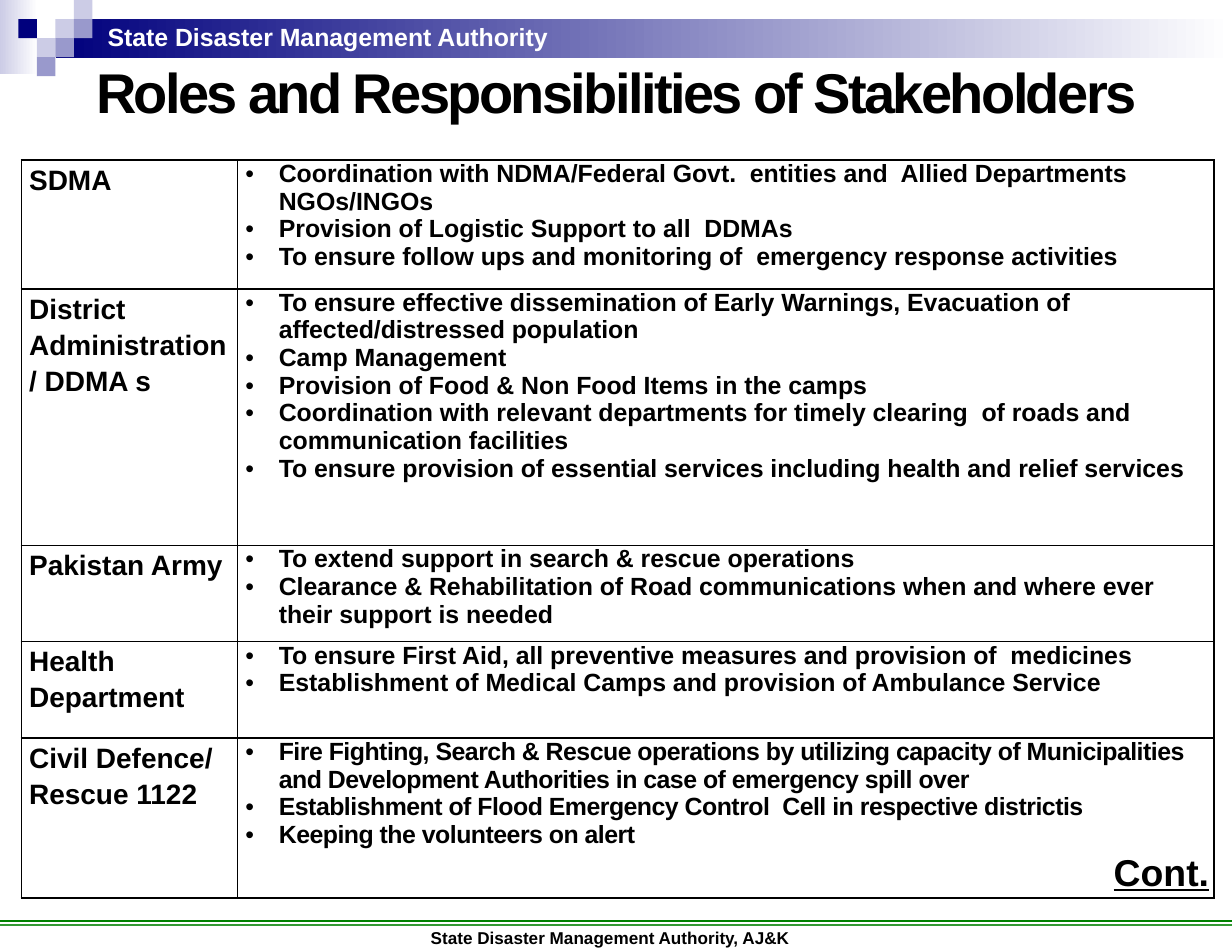
"""Builds the slide on stakeholder roles in disaster management."""
from lxml import etree
from pptx import Presentation
from pptx.dml.color import RGBColor
from pptx.enum.shapes import MSO_CONNECTOR, MSO_SHAPE
from pptx.enum.text import PP_ALIGN
from pptx.oxml.ns import qn
from pptx.util import Inches, Pt

LEFT, CENTER = PP_ALIGN.LEFT, PP_ALIGN.CENTER
RECTANGLE, STRAIGHT = MSO_SHAPE.RECTANGLE, MSO_CONNECTOR.STRAIGHT
BLACK = RGBColor(0, 0, 0)
WHITE = RGBColor(255, 255, 255)
NAVY = RGBColor(0x00, 0x00, 0x7D)
PALE = RGBColor(0xCC, 0xCC, 0xE6)
LILAC = RGBColor(0x99, 0x99, 0xCC)
DARK_GREEN = RGBColor(0x00, 0x80, 0x00)
GREEN = RGBColor(0x33, 0x99, 0x33)

SQUARES = [(3, 1, PALE), (4, 0, PALE), (4, 1, LILAC), (2, 2, PALE),
           (1, 1, NAVY), (3, 2, LILAC), (2, 3, LILAC)]
ROLES = [
    ("SDMA", 1.15, 0, [
        "Coordination with NDMA/Federal Govt.  entities and  Allied Departments NGOs/INGOs",
        "Provision of Logistic Support to all  DDMAs",
        "To ensure follow ups and monitoring of  emergency response activities"]),
    ("District Administration/ DDMA s", 2.29, 0, [
        "To ensure effective dissemination of Early Warnings, Evacuation of  affected/distressed population",
        "Camp Management",
        "Provision of Food & Non Food Items in the camps",
        "Coordination with relevant departments for timely clearing  of roads and communication facilities",
        "To ensure provision of essential services including health and relief services"]),
    ("Pakistan Army", 0.86, 0, [
        "To extend support in search & rescue operations",
        "Clearance & Rehabilitation of Road communications when and where ever  their support is needed"]),
    ("Health Department", 0.86, 0, [
        "To ensure First Aid, all preventive measures and provision of  medicines",
        "Establishment of Medical Camps and provision of Ambulance Service"]),
    ("Civil Defence/ Rescue 1122", 1.43, -0.3, [
        "Fire Fighting, Search & Rescue operations by utilizing capacity of Municipalities "
        "and Development Authorities in case of emergency spill over",
        "Establishment of Flood Emergency Control  Cell in respective districtis",
        "Keeping the volunteers on alert"]),
]


def write(frame, lines, size, color=BLACK, align=LEFT, line_spacing=None,
          tracking=0, underline=False, bullet=False):
    for index, line in enumerate(lines):
        para = frame.paragraphs[0] if index == 0 else frame.add_paragraph()
        para.alignment = align
        if line_spacing:
            para.line_spacing = line_spacing
        span = para.add_run()
        span.text = line
        font = span.font
        font.name, font.size, font.bold = "Arial", Pt(size), True
        font.color.rgb = color
        if underline:
            font.underline = True
        if tracking:
            font._element.set("spc", str(round(tracking * 100)))
        if bullet:
            properties = para._p.get_or_add_pPr()
            properties.set("marL", str(Inches(0.3)))
            properties.set("indent", str(Inches(-0.3)))
            etree.SubElement(properties, qn("a:buFont")).set("typeface", "Arial")
            etree.SubElement(properties, qn("a:buChar")).set("char", "•")


class SlideBuilder:
    def __init__(self, page):
        self.page = page

    def block(self, left, top, width, height, color, fade_to=None):
        shape = self.page.shapes.add_shape(RECTANGLE, left, top, width, height)
        shape.shadow.inherit = False
        shape.line.fill.background()
        if fade_to is None:
            shape.fill.solid()
            shape.fill.fore_color.rgb = color
            return
        shape.fill.gradient()
        shape.fill.gradient_angle = 0
        for stop, shade, position in zip(shape.fill.gradient_stops, (color, fade_to), (0, 1)):
            stop.color.rgb = shade
            stop.position = position

    def rule(self, top, color):
        line = self.page.shapes.add_connector(STRAIGHT, 0, Inches(top), Inches(11), Inches(top))
        line.line.color.rgb = color
        line.line.width = Pt(1.25)
        etree.SubElement(line._element.spPr, qn("a:effectLst"))

    def text(self, left, top, width, height, content, size, insets=(0.11, 0.06), wrap=True, **style):
        box = self.page.shapes.add_textbox(Inches(left), Inches(top), Inches(width), Inches(height))
        frame = box.text_frame
        frame.word_wrap = wrap
        frame.margin_left = frame.margin_right = Inches(insets[0])
        frame.margin_top = frame.margin_bottom = Inches(insets[1])
        write(frame, [content], size, **style)

    def border(self, cell):
        properties = cell._tc.get_or_add_tcPr()
        for side in ("a:lnL", "a:lnR", "a:lnT", "a:lnB"):
            line = etree.SubElement(properties, qn(side), w=str(Pt(1)))
            fill = etree.SubElement(line, qn("a:solidFill"))
            etree.SubElement(fill, qn("a:srgbClr"), val=str(BLACK))

    def roles_table(self, left, top, widths, roles):
        height = sum(role[1] for role in roles)
        table = self.page.shapes.add_table(len(roles), len(widths), Inches(left), Inches(top),
                                           Inches(sum(widths)), Inches(height)).table
        table.first_row = table.horz_banding = False
        for column, width in zip(table.columns, widths):
            column.width = Inches(width)
        for row, (name, row_height, tracking, duties) in zip(table.rows, roles):
            row.height = Inches(row_height)
            for cell in row.cells:
                cell.margin_left = cell.margin_right = Inches(0.07)
                cell.margin_top = cell.margin_bottom = 0
                self.border(cell)
                cell.fill.background()
            write(row.cells[0].text_frame, [name], 18, line_spacing=1.15)
            write(row.cells[1].text_frame, duties, 16, tracking=tracking, bullet=True)


def main():
    deck = Presentation()
    deck.slide_width, deck.slide_height = Inches(11), Inches(8.5)
    builder = SlideBuilder(deck.slides.add_slide(deck.slide_layouts[6]))

    builder.block(0, 0, Inches(0.34), Inches(0.66), PALE, fade_to=WHITE)
    builder.block(Inches(0.5), Inches(0.17), Inches(10.5), Inches(0.35), NAVY, fade_to=WHITE)
    side_x, side_y = Inches(0.33) // 2, Inches(0.17)
    for column, row, color in SQUARES:
        builder.block(column * side_x, row * side_y, side_x, side_y, color)
    builder.text(0.85, 0.13, 4.18, 0.38, "State Disaster Management Authority", 16,
                 wrap=False, color=WHITE)

    builder.rule(8.22, DARK_GREEN)
    builder.rule(8.26, GREEN)
    builder.text(2.83, 8.22, 5.28, 0.31, "State Disaster Management Authority, AJ&K ", 11,
                 align=CENTER)

    builder.roles_table(0.19, 1.43, (1.93, 8.72), ROLES)
    builder.text(9.82, 7.53, 1.1, 0.5, "Cont.", 24, insets=(0.1, 0.05), align=CENTER,
                 underline=True)
    builder.text(0, 0.58, 11, 0.55, "Roles and Responsibilities of Stakeholders", 36,
                 insets=(0, 0), align=CENTER, line_spacing=0.9, tracking=-1.7)
    deck.save("out.pptx")


if __name__ == "__main__":
    main()
